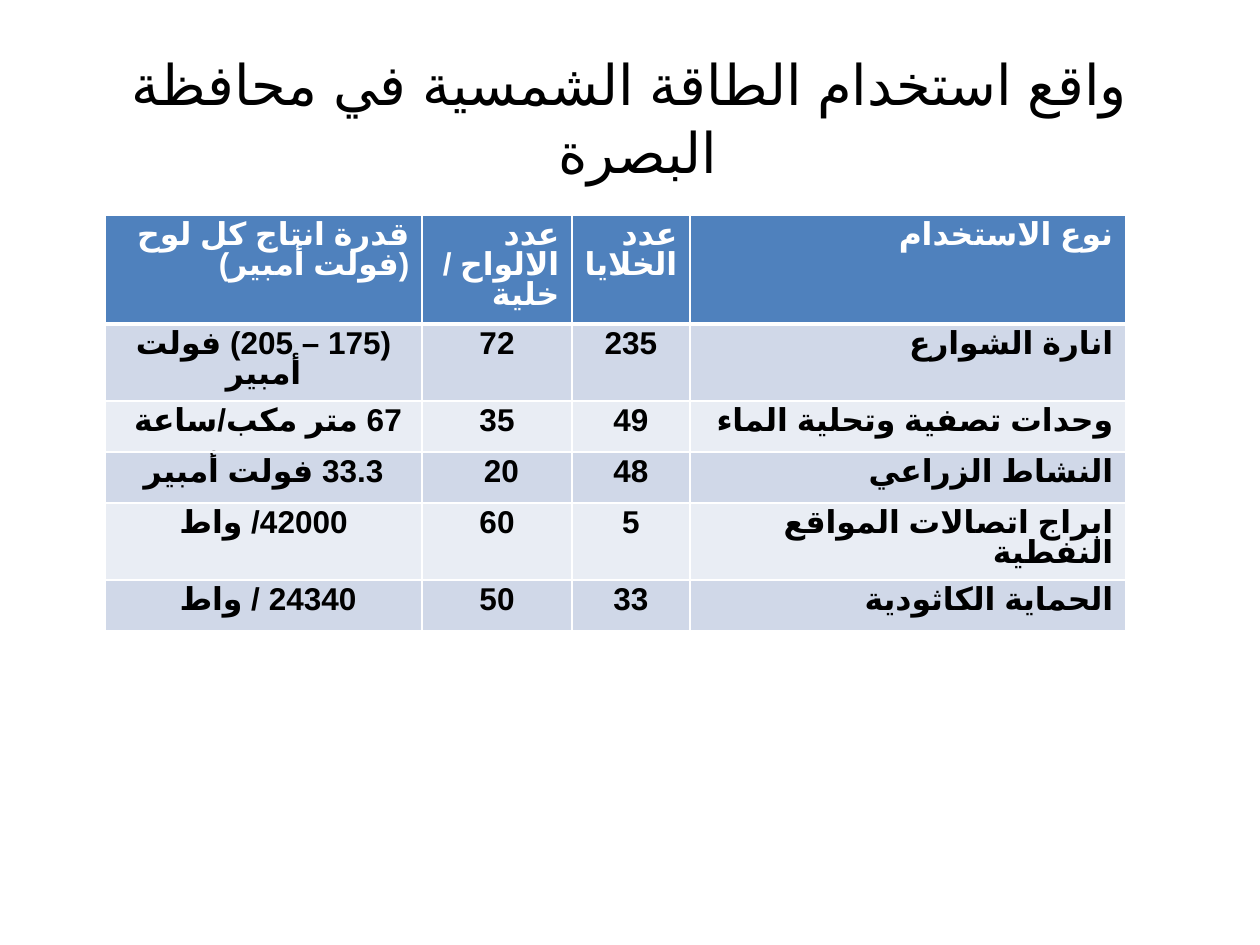
"""Build a slide with a table of solar energy use in Basra."""
from lxml import etree
from pptx import Presentation
from pptx.dml.color import RGBColor
from pptx.enum.text import MSO_ANCHOR, PP_ALIGN
from pptx.oxml.ns import qn
from pptx.util import Pt

MID = MSO_ANCHOR.MIDDLE
CENTER, RIGHT = PP_ALIGN.CENTER, PP_ALIGN.RIGHT
PX = 914400 // 126
WHITE, BLACK, BLUE = "FFFFFF", "000000", "4F81BD"
BANDS = ["E9EDF4", "D0D8E8"]


def color(code):
    return RGBColor.from_string(code)


def write(frame, text, size=18, ink=BLACK, bold=False, align=CENTER, space=None):
    para = frame.paragraphs[0]
    para.alignment = align
    para.line_spacing = space
    para._p.get_or_add_pPr().set("rtl", "1")
    run = para.add_run()
    run.text = text
    font = run.font
    font.name, font.size, font.bold = "Calibri", Pt(size), bold
    font.color.rgb = color(ink)
    run._r.get_or_add_rPr().set("lang", "ar-IQ")
    etree.SubElement(run._r.rPr, qn("a:cs")).set("typeface", "Arial")


deck = Presentation()
deck.slide_width, deck.slide_height = 1260 * PX, 945 * PX
slide = deck.slides.add_slide(deck.slide_layouts[6])

title = slide.shapes.add_textbox(63 * PX, 38 * PX, 1134 * PX, 158 * PX).text_frame
title.word_wrap = True
title.vertical_anchor = MID
write(title, "واقع استخدام الطاقة الشمسية في محافظة البصرة ", size=32)

rows = [
    ["قدرة انتاج كل لوح (فولت أمبير)", "عدد الالواح / خلية  ", "عدد الخلايا ", "نوع الاستخدام "],
    ["(175 – 205) فولت أمبير", "72", "235", "انارة الشوارع "],
    ["67 متر مكب/ساعة ", "35", "49", "وحدات تصفية وتحلية الماء"],
    ["33.3 فولت أمبير", "20 ", "48", "النشاط الزراعي "],
    ["42000/ واط", "60", "5", "ابراج اتصالات المواقع النفطية "],
    ["24340 / واط ", "50", "33", "الحماية الكاثودية "],
]
widths = [317, 150, 118, 436]
high = 51
table = slide.shapes.add_table(
    len(rows), len(widths), 105 * PX, 215 * PX, sum(widths) * PX, len(rows) * high * PX
).table
for col, width in zip(table.columns, widths):
    col.width = width * PX

for r, row in enumerate(rows):
    table.rows[r].height = high * PX
    for c, text in enumerate(row):
        cell = table.cell(r, c)
        head = r == 0
        props = cell._tc.get_or_add_tcPr()
        for side in "LRTB":
            thick = (r, side) in [(0, "B"), (1, "T")]
            line = etree.SubElement(props, qn("a:ln" + side), w=str(Pt(3 if thick else 1)))
            fill = etree.SubElement(line, qn("a:solidFill"))
            etree.SubElement(fill, qn("a:srgbClr"), val=WHITE)
        cell.fill.solid()
        cell.fill.fore_color.rgb = color(BLUE if head else BANDS[r % 2])
        write(
            cell.text_frame, text, ink=WHITE if head else BLACK, bold=True,
            align=RIGHT if head or c == 3 else CENTER, space=0.85,
        )

deck.save("out.pptx")
